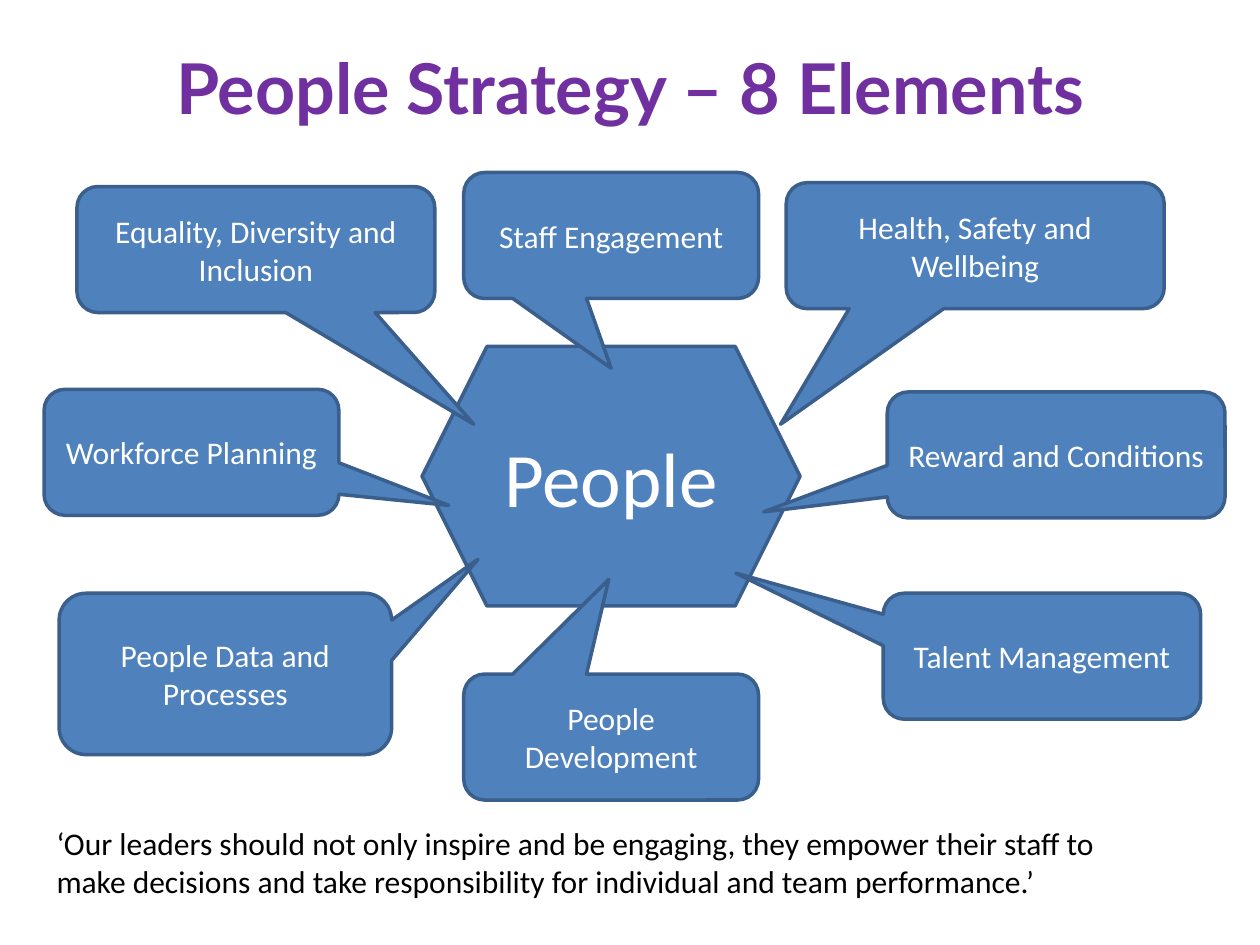
from dataclasses import dataclass
from pptx import Presentation
from pptx.dml.color import RGBColor as RGB
from pptx.enum.shapes import MSO_SHAPE as Shape
from pptx.enum.text import MSO_ANCHOR as Anchor, PP_ALIGN as Align
from pptx.util import Pt


@dataclass(frozen=True)
class Theme:
    fill: RGB = RGB.from_string("4F81BD")
    edge: RGB = RGB.from_string("3A5F8C")
    title: RGB = RGB.from_string("7030A0")
    white: RGB = RGB.from_string("FFFFFF")
    black: RGB = RGB.from_string("000000")
    head: str = "Lato"
    body: str = "Calibri"
    big: int = 40
    hub: int = 44
    small: int = 18
    stroke: int = 2


THEME = Theme()

# Label, left, top, width, height within the diagram; tip offset as share of size
CALLS = [
    ("Staff Engagement", 240, 0.6, 168.5, 72, 0, 1.054),
    ("Health, Safety and Wellbeing", 424.3, 6.4, 216, 72, -0.515, 1.418),
    ("Equality, Diversity and Inclusion", 19, 8.6, 204.5, 72, 0.609, 1.387),
    ("Workforce Planning", 0.2, 124.5, 168.5, 72, 0.872, 0.421),
    ("Reward and Conditions", 482, 126, 193, 72, -0.866, 0.452),
    ("People Data and Processes", 8.8, 241, 190, 92.2, 0.76, -0.711),
    ("Talent Management", 479.7, 241, 181.4, 72, -0.964, -0.659),
    ("People Development", 240, 287.2, 168.5, 72, -0.008, -1.251),
]


def write(shape, text, size, color, font=THEME.body, bold=False,
          align=Align.CENTER, anchor=Anchor.MIDDLE):
    frame = shape.text_frame
    frame.word_wrap = True
    frame.vertical_anchor = anchor
    para = frame.paragraphs[0]
    para.alignment = align
    run = para.add_run()
    run.text = text
    run.font.name, run.font.size, run.font.bold = font, Pt(size), bold
    run.font.color.rgb = color


def add_block(slide, kind, box, text, size):
    shape = slide.shapes.add_shape(kind, *map(Pt, box))
    shape.shadow.inherit = False
    shape.fill.solid()
    shape.fill.fore_color.rgb = THEME.fill
    shape.line.color.rgb = THEME.edge
    shape.line.width = Pt(THEME.stroke)
    write(shape, text, size, THEME.white)
    return shape


def add_title(slide, box):
    title = slide.shapes.title
    title.left, title.top, title.width, title.height = map(Pt, box)
    write(title, "People Strategy – 8 Elements", THEME.big, THEME.title,
          font=THEME.head, bold=True)


def add_wheel(slide, box):
    left, top = box
    # Hub
    add_block(slide, Shape.HEXAGON, (left + 216.2, top + 100, 216, 148.3),
              "People", THEME.hub)
    # Elements pointing at the hub
    for text, x, y, wide, high, *tip in CALLS:
        call = add_block(slide, Shape.ROUNDED_RECTANGULAR_CALLOUT,
                         (left + x, top + y, wide, high), text, THEME.small)
        call.adjustments[0], call.adjustments[1] = tip


def add_quote(slide, box):
    quote = slide.shapes.add_textbox(*map(Pt, box))
    write(quote, "‘Our leaders should not only inspire and be engaging, they "
          "empower their staff to make decisions and take responsibility for "
          "individual and team performance.’", THEME.small, THEME.black,
          align=Align.LEFT, anchor=Anchor.TOP)


def main():
    deck = Presentation()
    deck.slide_width, deck.slide_height = Pt(720), Pt(540)
    slide = deck.slides.add_slide(deck.slide_layouts[5])
    add_title(slide, (36, 21.6, 648, 55.4))
    add_wheel(slide, (25, 98))
    add_quote(slide, (25.2, 467.3, 615.6, 51))
    deck.save("out.pptx")


if __name__ == "__main__":
    main()
